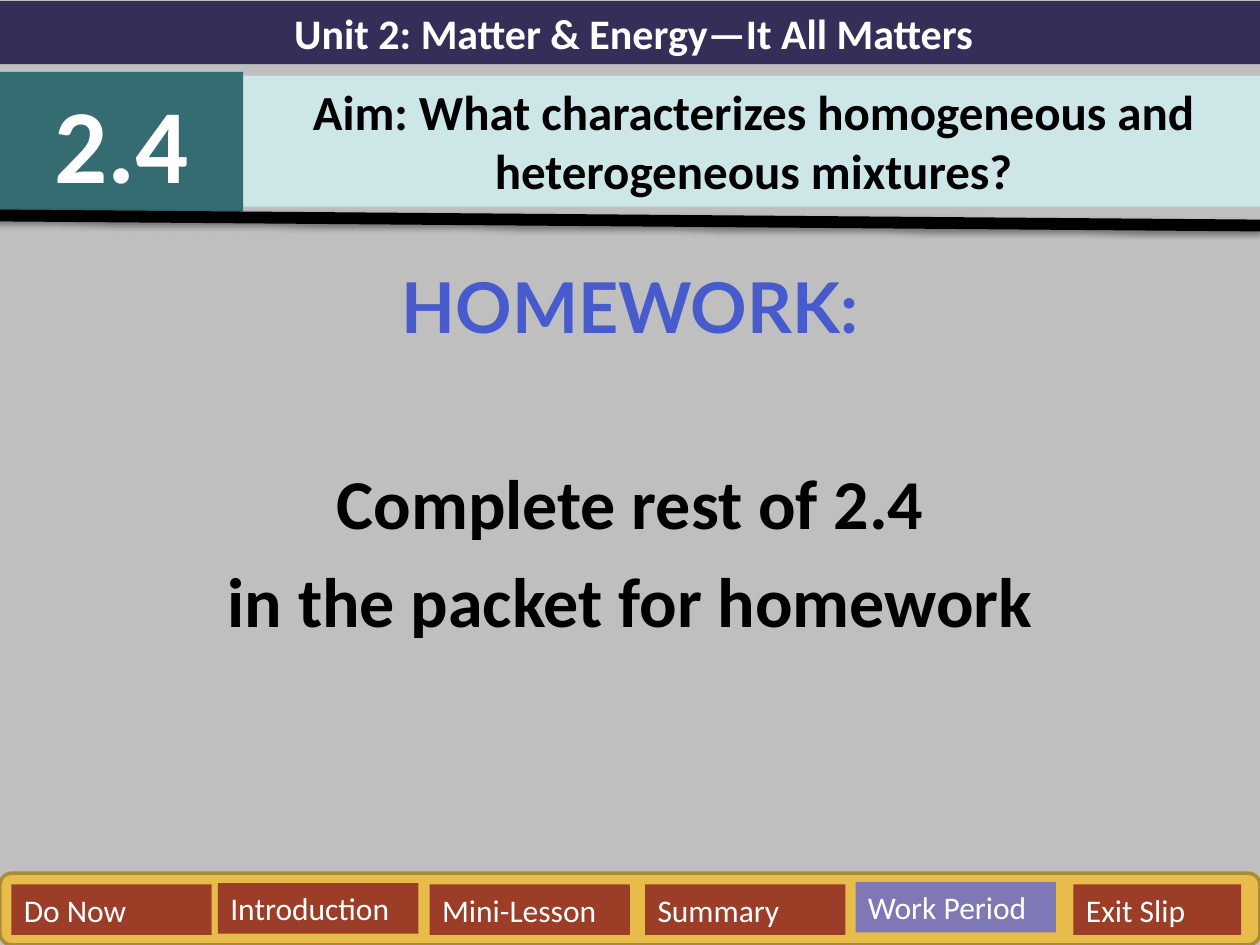
import pptx
import pptx.dml.color
import pptx.enum.shapes
import pptx.enum.text
import pptx.oxml
import pptx.util
from dataclasses import dataclass

Inches = pptx.util.Inches
Pt = pptx.util.Pt
SHAPES = pptx.enum.shapes.MSO_SHAPE
ALIGN = pptx.enum.text.PP_ALIGN
ANCHOR = pptx.enum.text.MSO_ANCHOR


@dataclass(frozen=True)
class Theme:
    ground: str = "BFBFBF"
    unit: str = "342F59"
    lesson: str = "346C71"
    aim: str = "CDE6E8"
    heading: str = "475BCD"
    bar: str = "E8BC4A"
    bar_edge: str = "AC8B37"
    tab: str = "9C3D28"
    current_tab: str = "7E78B7"
    light: str = "FFFFFF"
    dark: str = "000000"
    text_font: str = "Calibri"
    heading_font: str = "Lato"
    unit_size: int = 24
    lesson_size: int = 60
    aim_size: int = 28
    body_size: int = 40
    tab_size: int = 18


THEME = Theme()


def rgb(value):
    return pptx.dml.color.RGBColor.from_string(value)


def place(shape, box):
    for name, value in zip(("left", "top", "width", "height"), box):
        setattr(shape, name, Inches(value))


def write(para, text, size, color, bold=True, font=THEME.text_font, align=ALIGN.CENTER):
    para.alignment = align
    span = para.add_run()
    span.text = text
    values = {"name": font, "size": Pt(size), "bold": bold}
    for name, value in values.items():
        setattr(span.font, name, value)
    span.font.color.rgb = rgb(color)


def set_frame(frame):
    values = {"word_wrap": True, "vertical_anchor": ANCHOR.TOP,
              "auto_size": pptx.enum.text.MSO_AUTO_SIZE.NONE}
    for name, value in values.items():
        setattr(frame, name, value)


def fill(shape, color):
    shape.fill.solid()
    shape.fill.fore_color.rgb = rgb(color)


def add_block(shapes, box, color, kind=SHAPES.RECTANGLE):
    block = shapes.add_shape(kind, *map(Inches, box))
    block.shadow.inherit = False
    fill(block, color)
    block.line.fill.background()
    set_frame(block.text_frame)
    return block


def add_rule(page, start, end):
    rule = page.shapes.add_connector(
        pptx.enum.shapes.MSO_CONNECTOR.STRAIGHT, *map(Inches, start + end))
    rule.line.color.rgb = rgb(THEME.dark)
    rule.line.width = Pt(6.75)
    # Soft shadow straight below the rule
    rule._element.spPr.append(pptx.oxml.parse_xml(
        '<a:effectLst xmlns:a="http://schemas.openxmlformats.org/drawingml/2006/main">'
        f'<a:outerShdw blurRad="{Pt(3.1)}" dist="{Pt(1.6)}" dir="5400000" rotWithShape="0">'
        f'<a:srgbClr val="{THEME.dark}"><a:alpha val="38000"/></a:srgbClr>'
        '</a:outerShdw></a:effectLst>'))


def add_header(page, box):
    left, top, width, _ = box
    badge_width = 1.93

    # Unit name
    unit = add_block(page.shapes, (left, top, width + 0.06, 0.5), THEME.unit)
    write(unit.text_frame.paragraphs[0], "Unit 2: Matter & Energy—It All Matters",
          THEME.unit_size, THEME.light)

    # Lesson number
    lesson = add_block(page.shapes, (left, top + 0.56, badge_width, 1.11), THEME.lesson)
    write(lesson.text_frame.paragraphs[0], "2.4", THEME.lesson_size, THEME.light)

    # Aim, as the page title
    aim = page.shapes.title
    place(aim, (left + badge_width, top + 0.59, 8.1, 1.04))
    fill(aim, THEME.aim)
    set_frame(aim.text_frame)
    write(aim.text_frame.paragraphs[0],
          "Aim: What characterizes homogeneous and heterogeneous mixtures?",
          THEME.aim_size, THEME.dark)

    add_rule(page, (left - 0.05, top + 1.7), (left + width, top + 1.78))


def add_homework(page, box):
    body = page.placeholders[1]
    place(body, box)
    frame = body.text_frame
    set_frame(frame)
    lines = (
        ("HOMEWORK:", 8, THEME.heading, THEME.heading_font),
        ("Complete rest of 2.4", 64, THEME.dark, THEME.text_font),
        ("in the packet for homework", 8, THEME.dark, THEME.text_font),
    )
    for index, (text, gap, color, font) in enumerate(lines):
        para = frame.add_paragraph() if index else frame.paragraphs[0]
        para.space_before = Pt(gap)
        write(para, text, THEME.body_size, color, font=font)


def add_navigation(page, box):
    left, top, _, _ = box
    group = page.shapes.add_group_shape()
    bar = add_block(group.shapes, box, THEME.bar, SHAPES.ROUNDED_RECTANGLE)
    bar.line.color.rgb = rgb(THEME.bar_edge)
    bar.line.width = Pt(2)

    # Tabs: label, offset in the bar, width
    tabs = (
        ("Do Now", 0.09, 0.09, 1.59),
        ("Introduction", 1.73, 0.08, 1.59),
        ("Mini-Lesson", 3.41, 0.09, 1.59),
        ("Summary", 5.12, 0.09, 1.59),
        ("Work Period", 6.79, 0.07, 1.59),
        ("Exit Slip", 8.52, 0.09, 1.33),
    )
    for label, across, down, width in tabs:
        color = THEME.current_tab if label == "Work Period" else THEME.tab
        tab = add_block(group.shapes, (left + across, top + down, width, 0.4), color)
        write(tab.text_frame.paragraphs[0], label, THEME.tab_size, THEME.light,
              bold=False, align=ALIGN.LEFT)


def main():
    deck = pptx.Presentation()
    deck.slide_width, deck.slide_height = Inches(10), Inches(7.5)
    page = deck.slides.add_slide(deck.slide_layouts[0])
    fill(page.background, THEME.ground)
    add_homework(page, (0, 2.04, 10, 5.46))
    add_header(page, (0, 0.01, 10, 1.78))
    add_navigation(page, (0, 6.93, 10, 0.57))
    deck.save("out.pptx")


if __name__ == "__main__":
    main()
